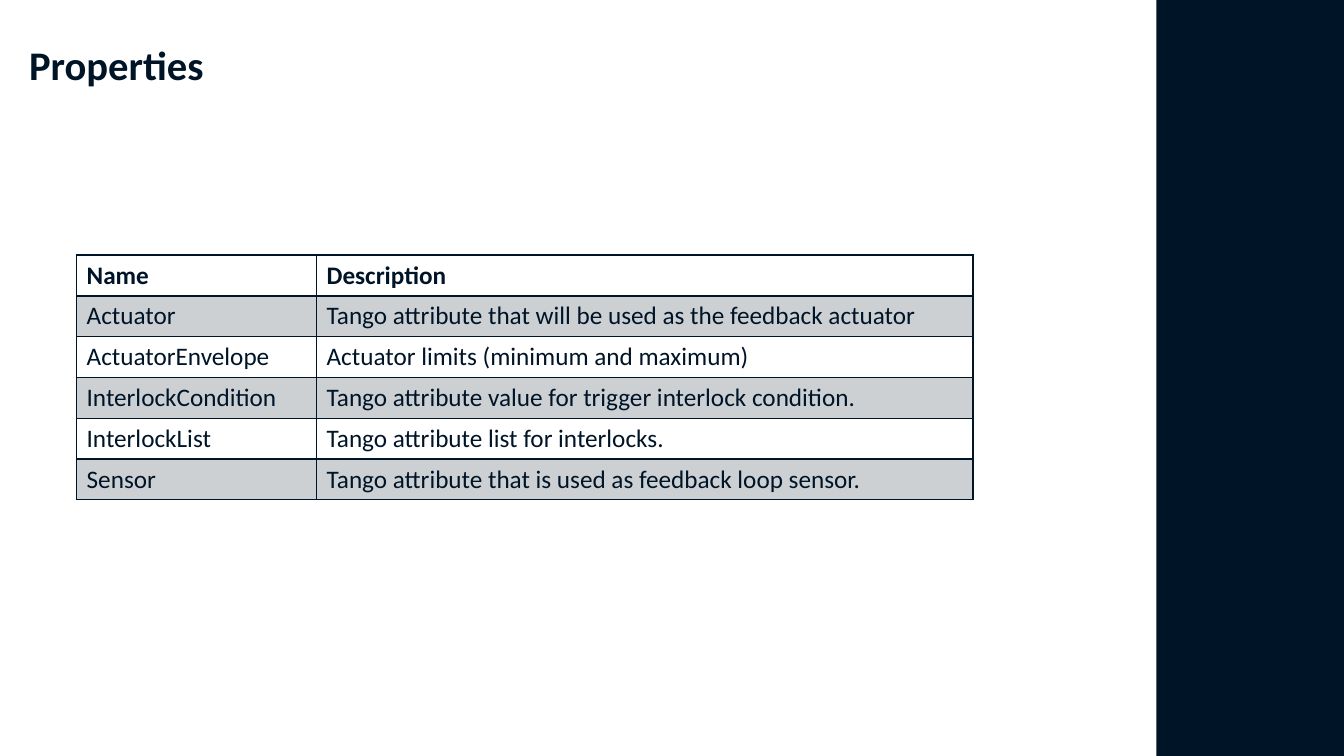
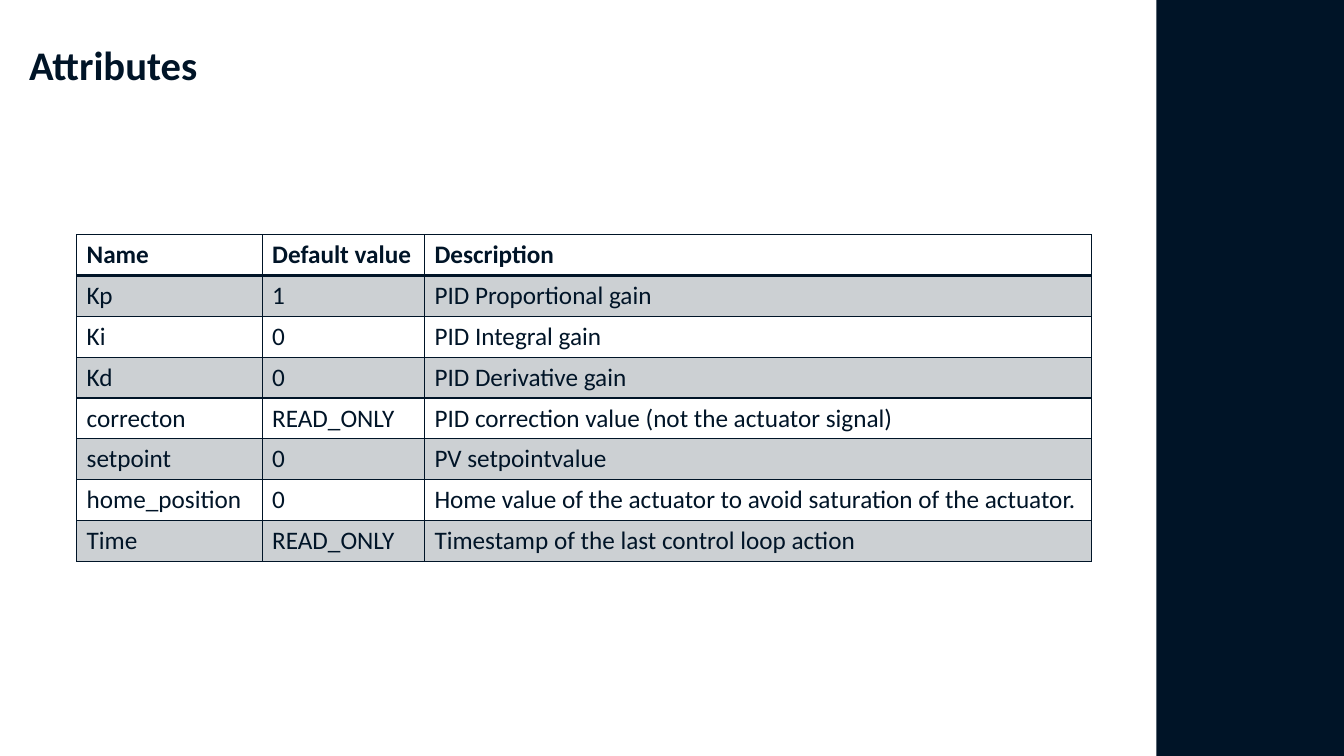
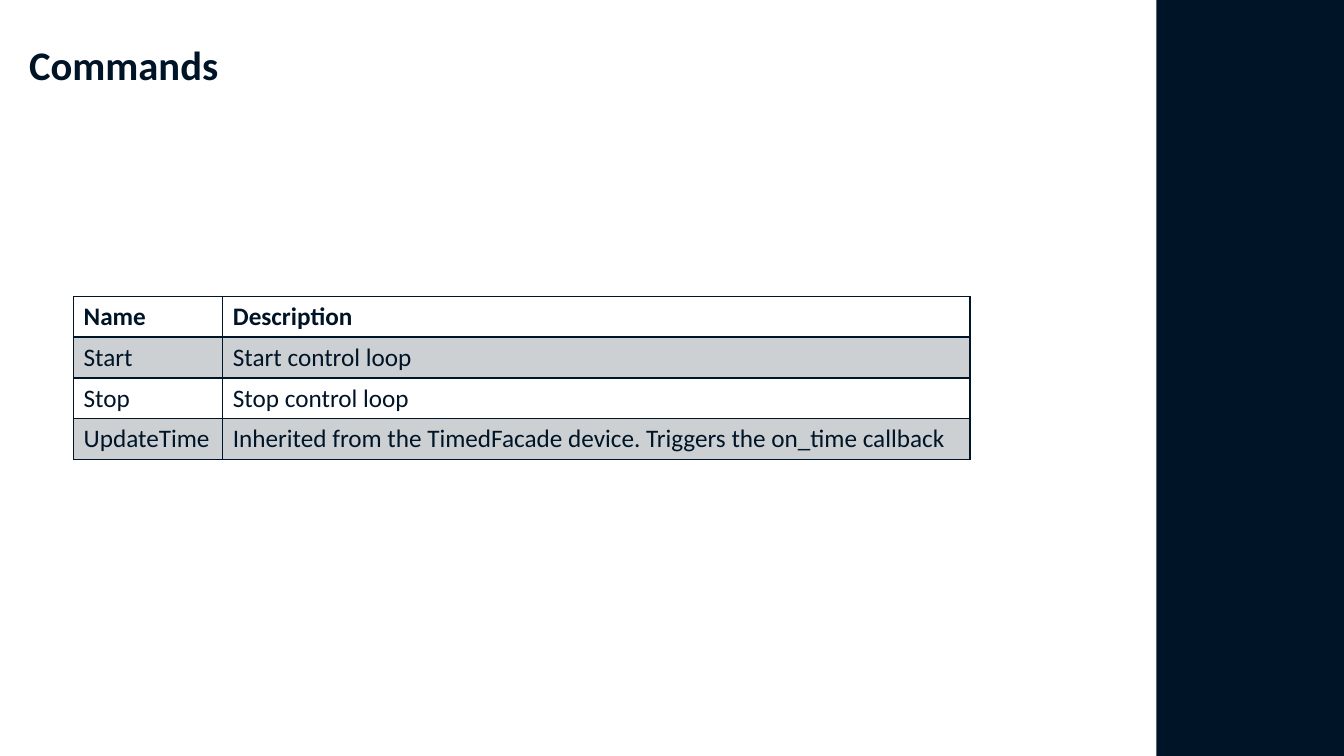
import pptx
import pptx.util
import pptx.dml.color
import pptx.enum.shapes
import pptx.enum.text
import pptx.oxml
import pptx.oxml.ns
from pptx.util import Inches

COLORS = {"navy": "001427"}
FONT = "Calibri"
SLIDE_W, SLIDE_H = 13.33, 7.5
BAND_LEFT = 11.47
TITLE_BOX = (0.19, 0.4, 2.1, 0.54)

PAGES = [
    {
        "title": "Properties",
        "box": (0.76, 2.53, 8.89, 2.43),
        "columns": (2.38, 6.51),
        "rows": [
            ("Name", "Description"),
            ("Actuator", "Tango attribute that will be used as the feedback actuator"),
            ("ActuatorEnvelope", "Actuator limits (minimum and maximum)"),
            ("InterlockCondition", "Tango attribute value for trigger interlock condition."),
            ("InterlockList", "Tango attribute list for interlocks."),
            ("Sensor", "Tango attribute that is used as feedback loop sensor."),
        ],
    },
    {
        "title": "Attributes",
        "box": (0.76, 2.33, 10.07, 3.24),
        "columns": (1.84, 1.61, 6.62),
        "rows": [
            ("Name", "Default value", "Description"),
            ("Kp", "1", "PID Proportional gain"),
            ("Ki", "0", "PID Integral gain"),
            ("Kd", "0", "PID Derivative gain"),
            ("correcton", "READ_ONLY", "PID correction value (not the actuator signal)"),
            ("setpoint", "0", "PV setpointvalue"),
            ("home_position", "0", "Home value of the actuator to avoid saturation of the actuator."),
            ("Time", "READ_ONLY", "Timestamp of the last control loop action"),
        ],
    },
    {
        "title": "Commands",
        "box": (0.73, 2.94, 8.89, 1.62),
        "columns": (1.48, 7.41),
        "rows": [
            ("Name", "Description"),
            ("Start", "Start control loop"),
            ("Stop", "Stop control loop"),
            ("UpdateTime", "Inherited from the TimedFacade device. Triggers the on_time callback"),
        ],
    },
]


def rgb(name):
    return pptx.dml.color.RGBColor.from_string(COLORS[name])


def write(frame, text, size=18, bold=False, color="navy", line_spacing=None):
    paragraph = frame.paragraphs[0]
    paragraph.line_spacing = line_spacing
    run = paragraph.add_run()
    run.text = text
    run.font.name = FONT
    run.font.size = pptx.util.Pt(size)
    run.font.bold = bold
    run.font.color.rgb = rgb(color)


def add_side_band(slide, box):
    band = slide.shapes.add_shape(
        pptx.enum.shapes.MSO_SHAPE.RECTANGLE, *map(Inches, box))
    band.shadow.inherit = False
    band.fill.solid()
    band.fill.fore_color.rgb = rgb("navy")
    band.line.fill.background()


def add_title(slide, text, box):
    frame = slide.shapes.add_textbox(*map(Inches, box)).text_frame
    frame.word_wrap = False
    frame.auto_size = pptx.enum.text.MSO_AUTO_SIZE.SHAPE_TO_FIT_TEXT
    write(frame, text, size=29, bold=True, line_spacing=0.9)


def set_borders(cell, bottom=1):
    """Line all four sides; must run before the cell is filled."""
    properties = cell._tc.get_or_add_tcPr()
    for side, points in (("L", 1), ("R", 1), ("T", 1), ("B", bottom)):
        properties.append(pptx.oxml.parse_xml(
            f'<a:ln{side} {pptx.oxml.ns.nsdecls("a")} w="{pptx.util.Pt(points)}">'
            f'<a:solidFill><a:srgbClr val="{COLORS["navy"]}"/></a:solidFill></a:ln{side}>'))


def shade(cell, opacity=20):
    cell.fill.solid()
    cell.fill.fore_color.rgb = rgb("navy")
    color = cell._tc.tcPr.find(pptx.oxml.ns.qn("a:solidFill"))[0]
    color.append(pptx.oxml.parse_xml(
        f'<a:alpha {pptx.oxml.ns.nsdecls("a")} val="{opacity * 1000}"/>'))


def add_definition_table(slide, rows, columns, box):
    """Header row, then rows shaded in turn, sharing the height of the box."""
    table = slide.shapes.add_table(len(rows), len(columns), *map(Inches, box)).table
    table.horz_banding = False
    for column, width in zip(table.columns, columns):
        column.width = Inches(width)
    for index, entries in enumerate(rows):
        is_header = index == 0
        table.rows[index].height = Inches(box[3] / len(rows))
        for cell, entry in zip(table.rows[index].cells, entries):
            write(cell.text_frame, entry, bold=is_header)
            set_borders(cell, bottom=2 if is_header else 1)
            if index % 2:
                shade(cell)
            else:
                cell.fill.background()


def add_page(deck, page):
    slide = deck.slides.add_slide(deck.slide_layouts[6])
    add_side_band(slide, (BAND_LEFT, 0, SLIDE_W - BAND_LEFT, SLIDE_H))
    add_title(slide, page["title"], TITLE_BOX)
    add_definition_table(slide, page["rows"], page["columns"], page["box"])


def main():
    deck = pptx.Presentation()
    deck.slide_width, deck.slide_height = Inches(SLIDE_W), Inches(SLIDE_H)
    for page in PAGES:
        add_page(deck, page)
    deck.save("out.pptx")


if __name__ == "__main__":
    main()
